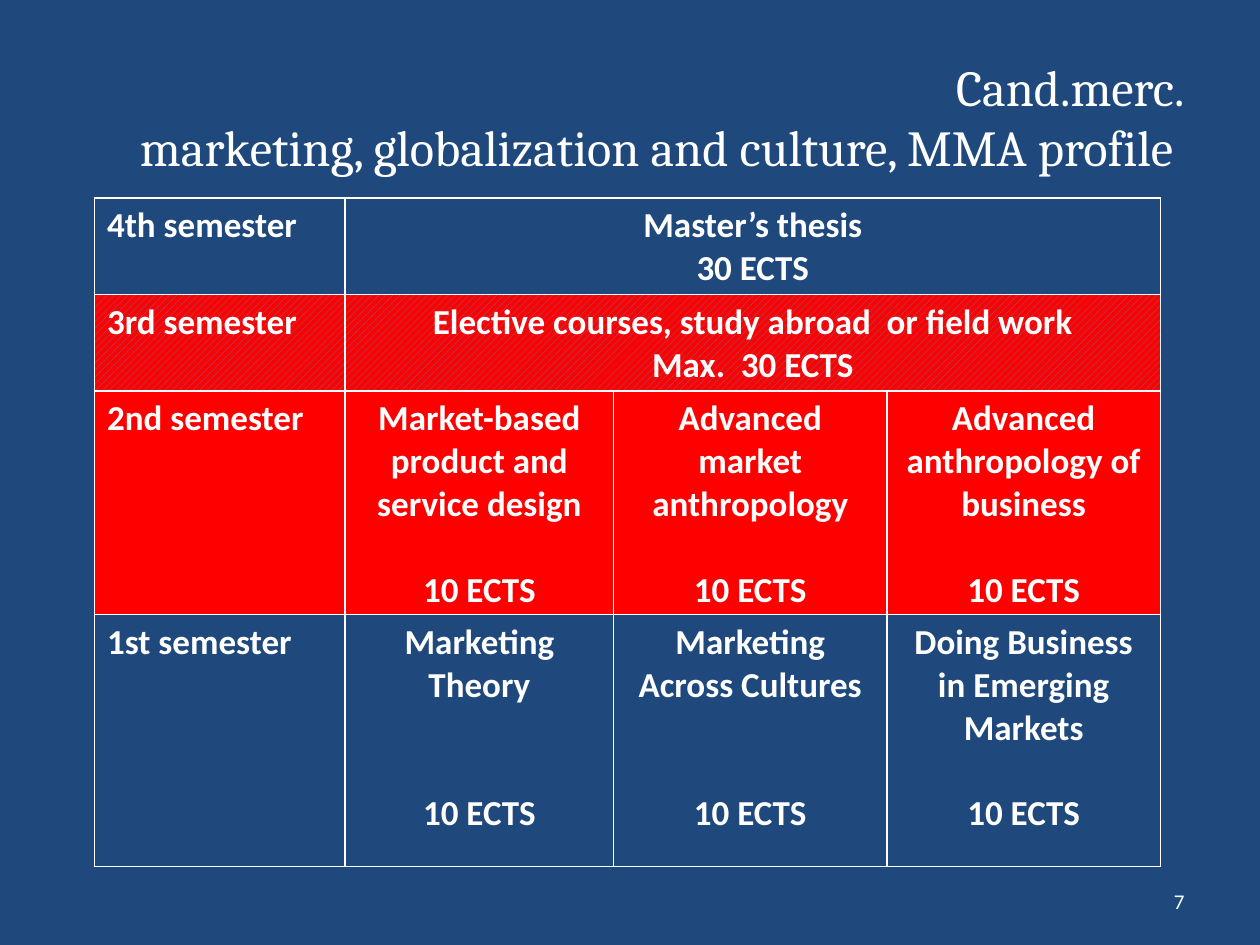
from lxml.etree import SubElement
from pptx import Presentation
from pptx.dml.color import RGBColor
from pptx.enum.dml import MSO_PATTERN
from pptx.enum.text import MSO_ANCHOR, PP_ALIGN
from pptx.oxml.ns import qn
from pptx.util import Inches, Pt

WHITE, NAVY, RED, BLUE = "FFFFFF", "1F497D", "FF0000", "4F81BD"
LINE_HEIGHT = 24.4
COLUMN_WIDTHS = [1.99, 2.13, 2.17, 2.17]
ROW_HEIGHTS = [0.75, 0.75, 1.74, 2]

# Each course is (name, blank lines before the credits, credits).
SEMESTERS = [
    ("4th semester", "plain", [("Master’s thesis", 0, "30 ECTS")]),
    ("3rd semester", "hatched",
     [("Elective courses, study abroad  or field work", 0, "Max.  30 ECTS")]),
    ("2nd semester", "red",
     [("Market-based product and service design", 1, "10 ECTS"),
      ("Advanced market anthropology", 1, "10 ECTS"),
      ("Advanced anthropology of business", 1, "10 ECTS")]),
    ("1st semester", "plain",
     [("Marketing Theory", 2, "10 ECTS"),
      ("Marketing Across Cultures", 2, "10 ECTS"),
      ("Doing Business in Emerging Markets", 1, "10 ECTS")]),
]


def color(value):
    return RGBColor.from_string(value)


def style_paragraph(paragraph, size, name, align, bold=False):
    paragraph.alignment = align
    font = paragraph.font
    font.size, font.name, font.bold = Pt(size), name, bold
    font.color.rgb = color(WHITE)


def add_text(page, text, left, top, width, height, size, name):
    box = page.shapes.add_textbox(Inches(left), Inches(top), Inches(width), Inches(height))
    frame = box.text_frame
    frame.word_wrap = True
    frame.vertical_anchor = MSO_ANCHOR.MIDDLE
    frame.paragraphs[0].text = text
    style_paragraph(frame.paragraphs[0], size, name, PP_ALIGN.RIGHT)


def draw_borders(cell):
    properties = cell._tc.get_or_add_tcPr()
    for side in ("a:lnL", "a:lnR", "a:lnT", "a:lnB"):
        line = SubElement(properties, qn(side), w=str(Pt(1)))
        fill = SubElement(line, qn("a:solidFill"))
        SubElement(fill, qn("a:srgbClr"), val=WHITE)


def fill_cell(cell, look):
    fill = cell.fill
    if look == "plain":
        fill.background()
    elif look == "red":
        fill.solid()
        fill.fore_color.rgb = color(RED)
    else:
        fill.patterned()
        fill.pattern = MSO_PATTERN.WIDE_UPWARD_DIAGONAL
        fill.fore_color.rgb = color(BLUE)
        fill.back_color.rgb = color(RED)


def write_cell(cell, lines, align, gap=0):
    frame = cell.text_frame
    frame.text = "\n".join(lines)
    for paragraph in frame.paragraphs:
        style_paragraph(paragraph, 20, "Calibri", align, bold=True)
    if gap:
        frame.paragraphs[-1].space_before = Pt(gap * LINE_HEIGHT)


def add_semester_table(page):
    frame = page.shapes.add_table(
        len(ROW_HEIGHTS), len(COLUMN_WIDTHS), Inches(0.75), Inches(1.57),
        Inches(sum(COLUMN_WIDTHS)), Inches(sum(ROW_HEIGHTS)))
    table = frame.table
    table.first_row = table.horz_banding = False
    for column, width in zip(table.columns, COLUMN_WIDTHS):
        column.width = Inches(width)
    for row, height in zip(table.rows, ROW_HEIGHTS):
        row.height = Inches(height)
    for index, (semester, look, courses) in enumerate(SEMESTERS):
        cells = list(table.rows[index].cells)
        for cell in cells:
            draw_borders(cell)
            fill_cell(cell, look)
        if len(courses) == 1:
            cells[1].merge(cells[-1])
        write_cell(cells[0], [semester], PP_ALIGN.LEFT)
        for cell, (course, gap, credits) in zip(cells[1:], courses):
            write_cell(cell, [course, credits], PP_ALIGN.CENTER, gap)


def main():
    deck = Presentation()
    deck.slide_width, deck.slide_height = Inches(10), Inches(7.5)
    page = deck.slides.add_slide(deck.slide_layouts[6])
    page.background.fill.solid()
    page.background.fill.fore_color.rgb = color(NAVY)
    add_text(page, "Cand.merc.\vmarketing, globalization and culture, MMA profile ",
             0.5, 0.3, 9, 1.25, 28.8, "Cambria")
    add_semester_table(page)
    add_text(page, "7", 7.17, 6.95, 2.33, 0.4, 12, "Calibri")
    deck.save("out.pptx")


if __name__ == "__main__":
    main()
